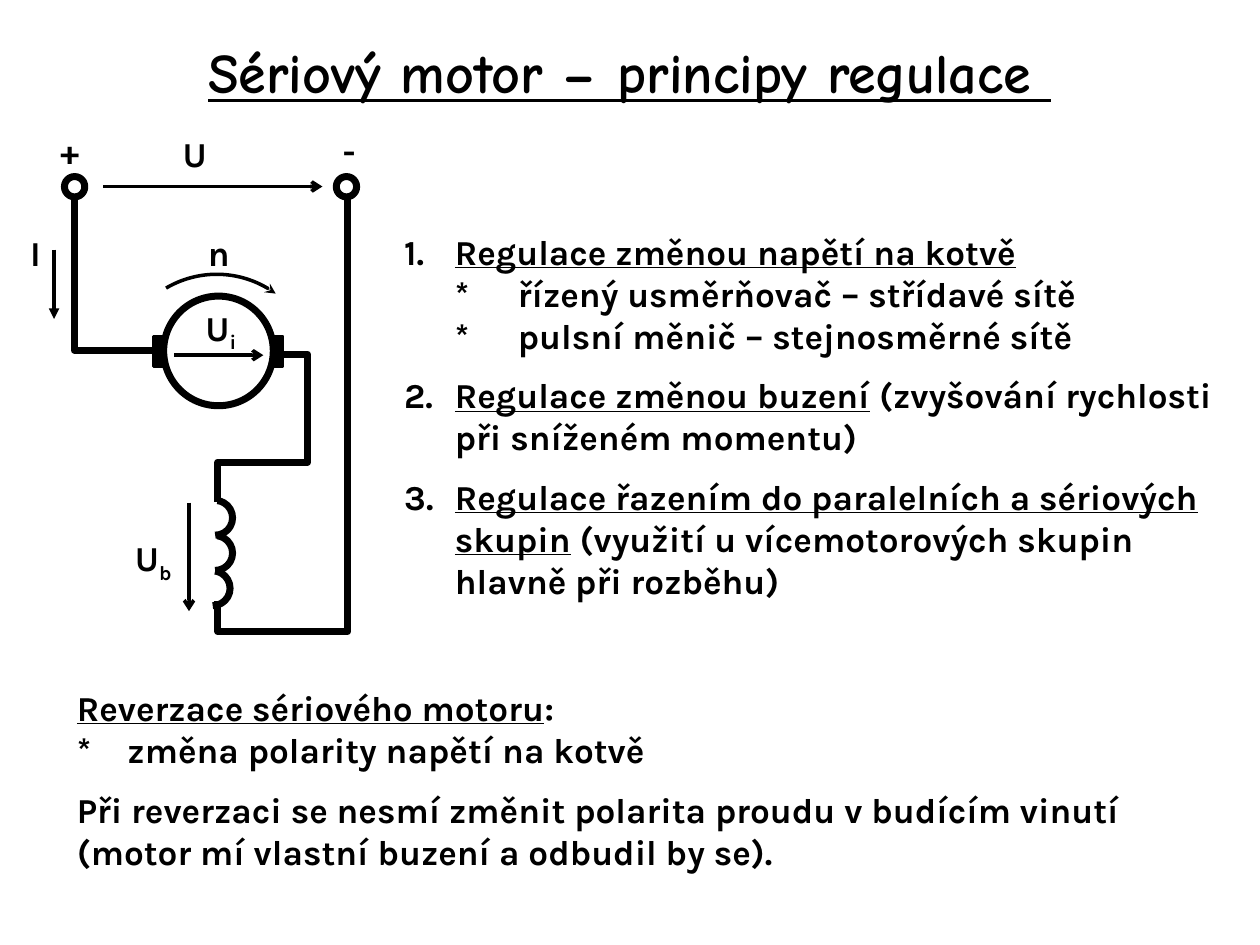
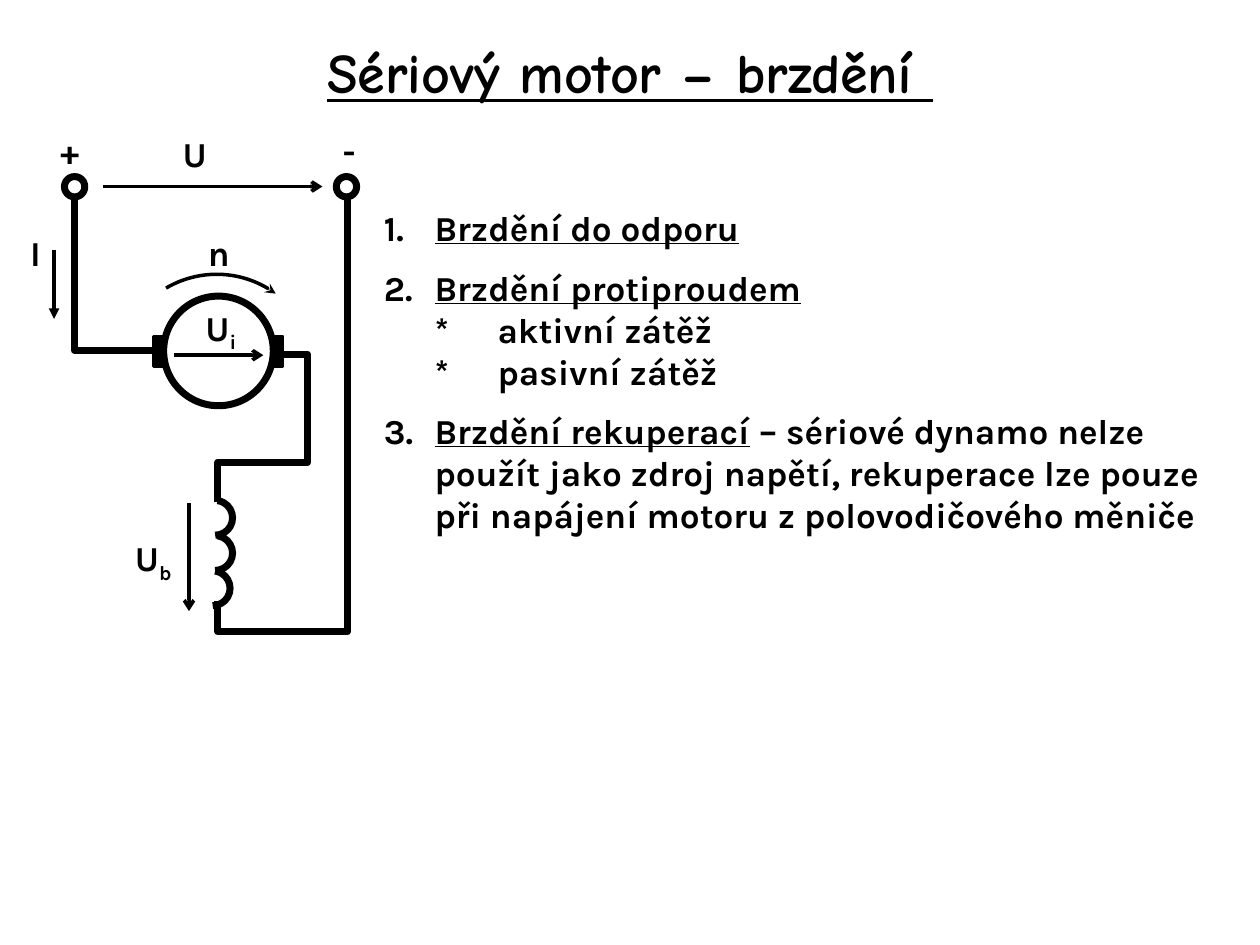
from lxml.etree import SubElement
from pptx import Presentation
from pptx.dml.color import RGBColor
from pptx.enum.shapes import MSO_CONNECTOR, MSO_SHAPE
from pptx.enum.text import MSO_ANCHOR, MSO_AUTO_SIZE, PP_ALIGN
from pptx.oxml.ns import qn
from pptx.util import Cm, Pt

BLACK = "000000"
WHITE = "FFFFFF"
TITLE_FONT = "Comic Neue"
BODY_FONT = "Karla"
TITLE_SIZE = 32
BODY_SIZE = 20
PARAGRAPH_GAP = 10
HANGING_INDENT = 1.02
LABEL_INSET = 0.1
LABEL_HEIGHT = 1.05
THICK = 4
THIN = 2


def color(hex_string):
    return RGBColor.from_string(hex_string)


class SlideBuilder:
    """Holds the shared style and the slide being drawn; positions are in centimetres."""

    def __init__(self):
        self.presentation = Presentation()
        self.presentation.slide_width = Cm(25.4)
        self.presentation.slide_height = Cm(19.05)
        self.slide = None
        self.shapes = None

    def new_slide(self, title):
        self.slide = self.presentation.slides.add_slide(self.presentation.slide_layouts[6])
        self.slide.background.fill.solid()
        self.slide.background.fill.fore_color.rgb = color(WHITE)
        self.shapes = self.slide.shapes
        frame = self.text_frame(0.5, 0.53, 24.4, 1.8)
        frame.vertical_anchor = MSO_ANCHOR.MIDDLE
        paragraph = frame.paragraphs[0]
        paragraph.alignment = PP_ALIGN.CENTER
        self.run(paragraph, title, underline=True, font=TITLE_FONT, size=TITLE_SIZE)

    def start_group(self):
        self.shapes = self.slide.shapes.add_group_shape().shapes

    def end_group(self):
        self.shapes = self.slide.shapes

    def text_frame(self, left, top, width, height):
        shape = self.shapes.add_textbox(Cm(left), Cm(top), Cm(width), Cm(height))
        shape.text_frame.word_wrap = True
        return shape.text_frame

    def run(self, paragraph, text, underline=False, font=BODY_FONT, size=BODY_SIZE):
        run = paragraph.add_run()
        run.text = text
        run.font.name = font
        run.font.size = Pt(size)
        run.font.bold = True
        run.font.underline = underline
        run.font.color.rgb = color(BLACK)
        return run

    def text(self, left, top, width, height, lines):
        """Each line is (underlined text, plain text, prefix, indented, gap before)."""
        frame = self.text_frame(left, top, width, height)
        frame.auto_size = MSO_AUTO_SIZE.SHAPE_TO_FIT_TEXT
        for index, (underlined, plain, prefix, indented, gap) in enumerate(lines):
            paragraph = frame.add_paragraph() if index else frame.paragraphs[0]
            if indented:
                properties = paragraph._p.get_or_add_pPr()
                properties.set("marL", str(Cm(HANGING_INDENT)))
                properties.set("indent", str(-Cm(HANGING_INDENT)))
            if gap:
                paragraph.space_before = Pt(PARAGRAPH_GAP)
            for text, underline in ((prefix, False), (underlined, True), (plain, False)):
                if text:
                    self.run(paragraph, text, underline)

    def label(self, left, top, width, text, subscript=""):
        frame = self.text_frame(left, top, width, LABEL_HEIGHT)
        frame.word_wrap = False
        frame.auto_size = MSO_AUTO_SIZE.SHAPE_TO_FIT_TEXT
        frame.margin_left = frame.margin_right = Cm(LABEL_INSET)
        frame.margin_top = frame.margin_bottom = Cm(LABEL_INSET)
        paragraph = frame.paragraphs[0]
        self.run(paragraph, text)
        if subscript:
            run = self.run(paragraph, subscript)
            run._r.get_or_add_rPr().set("baseline", "-25000")

    def outline(self, shape, weight, fill=None):
        shape.shadow.inherit = False
        shape.line.color.rgb = color(BLACK)
        shape.line.width = Pt(weight)
        if fill:
            shape.fill.solid()
            shape.fill.fore_color.rgb = color(fill)
        else:
            shape.fill.background()

    def circle(self, left, top, diameter):
        shape = self.shapes.add_shape(
            MSO_SHAPE.OVAL, Cm(left), Cm(top), Cm(diameter), Cm(diameter))
        self.outline(shape, THICK)

    def block(self, left, top, width, height):
        shape = self.shapes.add_shape(
            MSO_SHAPE.RECTANGLE, Cm(left), Cm(top), Cm(width), Cm(height))
        self.outline(shape, THIN, BLACK)

    def arc(self, center_x, center_y, radius, start, end, weight):
        """Draw clockwise from start to end, in degrees from the right-hand side."""
        shape = self.shapes.add_shape(
            MSO_SHAPE.ARC, Cm(center_x - radius), Cm(center_y - radius),
            Cm(2 * radius), Cm(2 * radius))
        shape.adjustments[0] = start * 0.6
        shape.adjustments[1] = end * 0.6
        self.outline(shape, weight)
        return shape

    def wire(self, *points):
        corners = [(Cm(x), Cm(y)) for x, y in points]
        builder = self.shapes.build_freeform(*corners[0])
        builder.add_line_segments(corners[1:], close=False)
        self.outline(builder.convert_to_shape(), THICK)

    def arrowhead(self, shape, kind):
        SubElement(shape.line._get_or_add_ln(), qn("a:tailEnd"), type=kind)

    def arrow(self, start_x, start_y, end_x, end_y, kind="arrow"):
        connector = self.shapes.add_connector(
            MSO_CONNECTOR.STRAIGHT, Cm(start_x), Cm(start_y), Cm(end_x), Cm(end_y))
        connector.line.color.rgb = color(BLACK)
        connector.line.width = Pt(THIN)
        self.arrowhead(connector, kind)
        SubElement(connector._element.spPr, qn("a:effectLst"))


def heading(number, underlined, plain=""):
    return underlined, plain, f"{number}.\t", True, number > 1


def starred(text, prefix="\t*\t"):
    return "", text, prefix, True, False


def draw_motor_circuit(builder):
    builder.start_group()
    for turn, center_x in enumerate((4.34, 4.34, 4.29)):
        builder.arc(center_x, 10.44 + turn * 0.71, 0.35, 278, 90, THICK)
    builder.circle(3.3, 5.97, 2.21)
    for brush_left in (3.1, 5.49):
        builder.block(brush_left, 6.78, 0.2, 0.61)
    for terminal_left in (1.3, 6.78):
        builder.circle(terminal_left, 3.56, 0.41)

    builder.wire((1.5, 4.04), (1.5, 7.06), (3.07, 7.06))
    builder.wire((5.61, 7.14), (6.2, 7.14), (6.2, 9.32), (4.39, 9.32), (4.39, 10.13))
    builder.wire((7.01, 3.94), (7.01, 12.73), (4.39, 12.73), (4.39, 12.12))

    builder.arrow(2.08, 3.76, 6.5, 3.76)
    builder.arrow(3.51, 7.16, 5.31, 7.16)
    builder.arrow(3.81, 10.13, 3.81, 12.32)
    builder.arrow(1.09, 5.03, 1.09, 6.43, "triangle")
    rotation = builder.arc(4.37, 7.54, 2.01, 239.5, 306.3, THIN)
    builder.arrowhead(rotation, "stealth")

    builder.label(1.12, 2.51, 0.79, "+")
    builder.label(3.58, 2.57, 0.71, "U")
    builder.label(6.81, 2.51, 0.51, "-")
    builder.label(0.51, 4.57, 0.53, "I")
    builder.label(4.09, 4.57, 0.66, "n")
    builder.label(4.04, 6.07, 0.86, "U", "i")
    builder.label(2.62, 10.72, 1.02, "U", "b")
    builder.end_group()


def add_regulation_slide(builder):
    builder.new_slide("Sériový motor – principy regulace ")
    builder.text(7.9, 4.52, 17, 7.87, [
        heading(1, "Regulace změnou napětí na kotvě"),
        starred("řízený usměrňovač – střídavé sítě"),
        starred("pulsní měnič – stejnosměrné sítě"),
        heading(2, "Regulace změnou buzení", " (zvyšování rychlosti při sníženém momentu)"),
        heading(3, "Regulace řazením do paralelních a sériových skupin",
                " (využití u vícemotorových skupin hlavně při rozběhu)"),
    ])
    draw_motor_circuit(builder)
    builder.text(1.3, 13.72, 23.22, 4.11, [
        ("Reverzace sériového motoru", ":", "", False, False),
        starred("změna polarity napětí na kotvě", "*\t"),
        ("", "Při reverzaci se nesmí změnit polarita proudu v budícím vinutí "
             "(motor mí vlastní buzení a odbudil by se).", "", False, True),
    ])


def add_braking_slide(builder):
    builder.new_slide("Sériový motor – brzdění ")
    builder.text(7.49, 4.04, 17.4, 7.87, [
        heading(1, "Brzdění do odporu"),
        heading(2, "Brzdění protiproudem"),
        starred("aktivní zátěž"),
        starred("pasivní zátěž"),
        heading(3, "Brzdění rekuperací",
                " – sériové dynamo nelze použít jako zdroj napětí, rekuperace lze "
                "pouze při napájení motoru z polovodičového měniče"),
    ])
    draw_motor_circuit(builder)


def main():
    builder = SlideBuilder()
    add_regulation_slide(builder)
    add_braking_slide(builder)
    builder.presentation.save("out.pptx")


if __name__ == "__main__":
    main()
